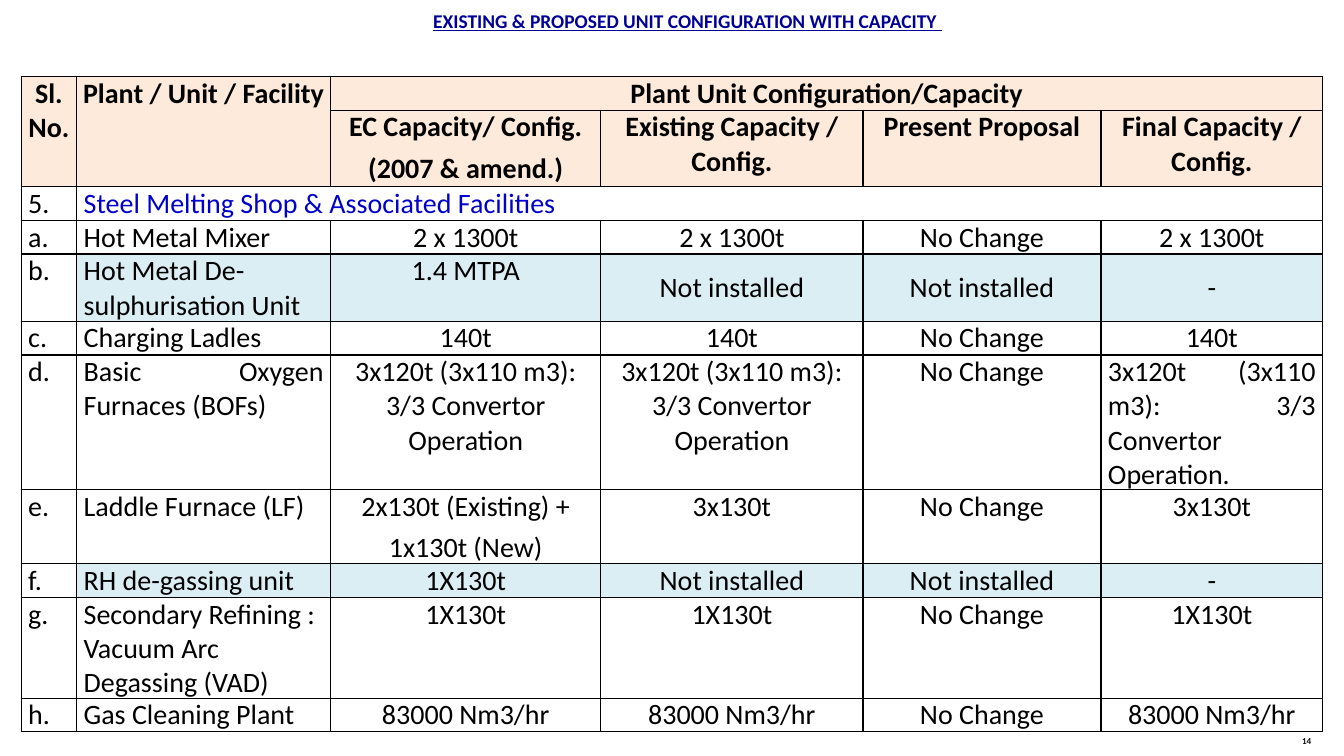
from lxml.etree import SubElement
from pptx import Presentation
from pptx.dml.color import RGBColor
from pptx.enum.text import MSO_ANCHOR, PP_ALIGN
from pptx.oxml import parse_xml
from pptx.oxml.ns import nsdecls, qn
from pptx.util import Inches, Pt

BLACK = RGBColor(0x00, 0x00, 0x00)
NAVY = RGBColor(0x00, 0x00, 0x99)
BLUE = RGBColor(0x00, 0x00, 0xCC)
WHITE = RGBColor(0xFF, 0xFF, 0xFF)
PEACH = RGBColor(0xFD, 0xEA, 0xDA)
PALE_BLUE = RGBColor(0xDB, 0xEE, 0xF4)

COLUMN_WIDTHS = (0.55, 2.52, 2.68, 2.6, 2.36, 2.2)
LINE_HEIGHT = 0.33
ROW_HEIGHTS = [LINE_HEIGHT * lines for lines in (1, 2.3, 1, 1, 2, 1, 4, 2.2, 1, 3, 1)]
CONVERTER = "3x120t (3x110 m3): 3/3 Convertor Operation"
GROUP_HEADING = "Plant Unit Configuration/Capacity"
COLUMN_HEADINGS = (
    "EC Capacity/ Config.\n(2007 & amend.)",
    "Existing Capacity / Config.",
    "Present Proposal",
    "Final Capacity / Config.",
)
SECTION = ("5.", "Steel Melting Shop & Associated Facilities")
UNITS = (
    ("a.", "Hot Metal Mixer", "2 x 1300t", "2 x 1300t", "No Change", "2 x 1300t"),
    ("b.", "Hot Metal De-sulphurisation Unit", "1.4 MTPA",
     "Not installed", "Not installed", "-"),
    ("c.", "Charging Ladles", "140t", "140t", "No Change", "140t"),
    ("d.", "Basic Oxygen Furnaces (BOFs) ", CONVERTER, CONVERTER,
     "No Change", CONVERTER + "."),
    ("e.", "Laddle Furnace (LF)", "2x130t (Existing) +\n1x130t (New)",
     "3x130t", "No Change", "3x130t"),
    ("f.", "RH de-gassing unit", "1X130t", "Not installed", "Not installed", "-"),
    ("g.", "Secondary Refining : Vacuum Arc Degassing (VAD)",
     "1X130t", "1X130t", "No Change", "1X130t"),
    ("h.", "Gas Cleaning Plant", "83000 Nm3/hr", "83000 Nm3/hr",
     "No Change", "83000 Nm3/hr"),
)


def write(frame, text, size, color, alignment, bold=False, font_name="Calibri"):
    """Fill a text frame, one paragraph for each line of the text."""
    frame.text = text
    frame.word_wrap = True
    for index, paragraph in enumerate(frame.paragraphs):
        paragraph.alignment = alignment
        if index:
            paragraph.space_before = Pt(5)
        for run in paragraph.runs:
            run.font.name = font_name
            run.font.size = Pt(size)
            run.font.bold = bold
            run.font.color.rgb = color


def add_raised_text(slide, box, text, size, color, font_name="Calibri",
                    margin=0.0, underline=False):
    """Add a bold, centred line set as superscript."""
    shape = slide.shapes.add_textbox(*map(Inches, box))
    frame = shape.text_frame
    frame.margin_left = frame.margin_right = Inches(2 * margin)
    frame.margin_top = frame.margin_bottom = Inches(margin)
    write(frame, text, size, color, PP_ALIGN.CENTER, True, font_name)
    run = frame.paragraphs[0].runs[0]
    run.font.underline = underline
    run.font._element.set("baseline", "30000")


def add_borders(cell):
    properties = cell._tc.get_or_add_tcPr()
    for index, side in enumerate(("lnL", "lnR", "lnT", "lnB")):
        line = parse_xml(f'<a:{side} {nsdecls("a")} w="{Pt(1)}"/>')
        fill = SubElement(line, qn("a:solidFill"))
        SubElement(fill, qn("a:srgbClr"), val=str(BLACK))
        properties.insert(index, line)


def fill_cell(cell, text, alignment, fill=None, color=BLACK, bold=False, margin=0.07):
    cell.margin_left = cell.margin_right = Inches(margin)
    cell.margin_top = cell.margin_bottom = 0
    if fill is not None:
        cell.fill.solid()
        cell.fill.fore_color.rgb = fill
    write(cell.text_frame, text, 20, color, alignment, bold)


def fill_header(table):
    def heading(row, column, text):
        fill_cell(table.cell(row, column), text, PP_ALIGN.CENTER, PEACH,
                  bold=True, margin=0.05)

    for column, text in enumerate(("Sl. No.", "Plant / Unit / Facility")):
        table.cell(0, column).merge(table.cell(1, column))
        heading(0, column, text)
    table.cell(0, 2).merge(table.cell(0, 5))
    heading(0, 2, GROUP_HEADING)
    for column, text in enumerate(COLUMN_HEADINGS, 2):
        heading(1, column, text)


def fill_unit(table, row, unit):
    not_installed = "Not installed" in unit
    for column, text in enumerate(unit):
        cell = table.cell(row, column)
        alignment = PP_ALIGN.LEFT if column == 1 else PP_ALIGN.CENTER
        if column == 0 or (unit[0] == "d." and column in (1, 5)):
            alignment = PP_ALIGN.JUSTIFY
        fill = PALE_BLUE if not_installed else WHITE
        fill_cell(cell, text, alignment, fill if column else None)
        if unit[0] == "b." and column > 2:
            cell.vertical_anchor = MSO_ANCHOR.MIDDLE


def add_capacity_table(slide, left, top):
    frame = slide.shapes.add_table(
        len(ROW_HEIGHTS), len(COLUMN_WIDTHS), Inches(left), Inches(top),
        Inches(sum(COLUMN_WIDTHS)), Inches(sum(ROW_HEIGHTS)))
    table = frame.table
    table.first_row = table.horz_banding = False
    for column, width in zip(table.columns, COLUMN_WIDTHS):
        column.width = Inches(width)
    for row, height in zip(table.rows, ROW_HEIGHTS):
        row.height = Inches(height)
    for cell in table.iter_cells():
        cell.fill.background()
        add_borders(cell)

    fill_header(table)
    table.cell(2, 1).merge(table.cell(2, 5))
    fill_cell(table.cell(2, 0), SECTION[0], PP_ALIGN.JUSTIFY)
    fill_cell(table.cell(2, 1), SECTION[1], PP_ALIGN.LEFT, WHITE, BLUE)
    for row, unit in enumerate(UNITS, 3):
        fill_unit(table, row, unit)


def main():
    presentation = Presentation()
    presentation.slide_width = Inches(13.33)
    presentation.slide_height = Inches(7.5)
    slide = presentation.slides.add_slide(presentation.slide_layouts[6])
    add_raised_text(slide, (12.65, 7.24, 0.62, 0.27), "14", 10, BLACK,
                    "Lato", margin=0.05)
    add_raised_text(slide, (1.31, 0.05, 11.02, 0.4),
                    "EXISTING & PROPOSED UNIT CONFIGURATION WITH CAPACITY ",
                    24, NAVY, underline=True)
    add_capacity_table(slide, 0.21, 0.76)
    presentation.save("out.pptx")


if __name__ == "__main__":
    main()
